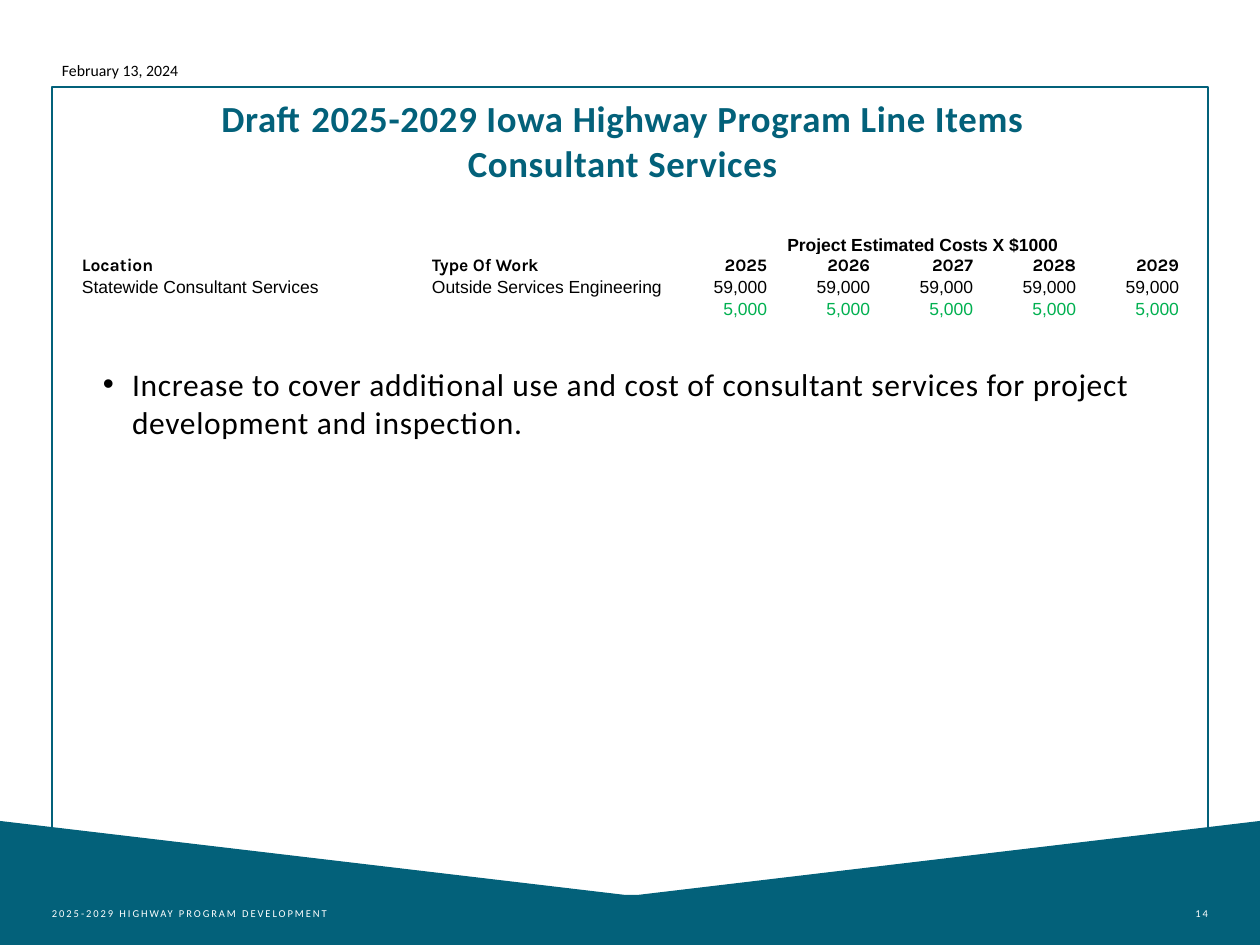
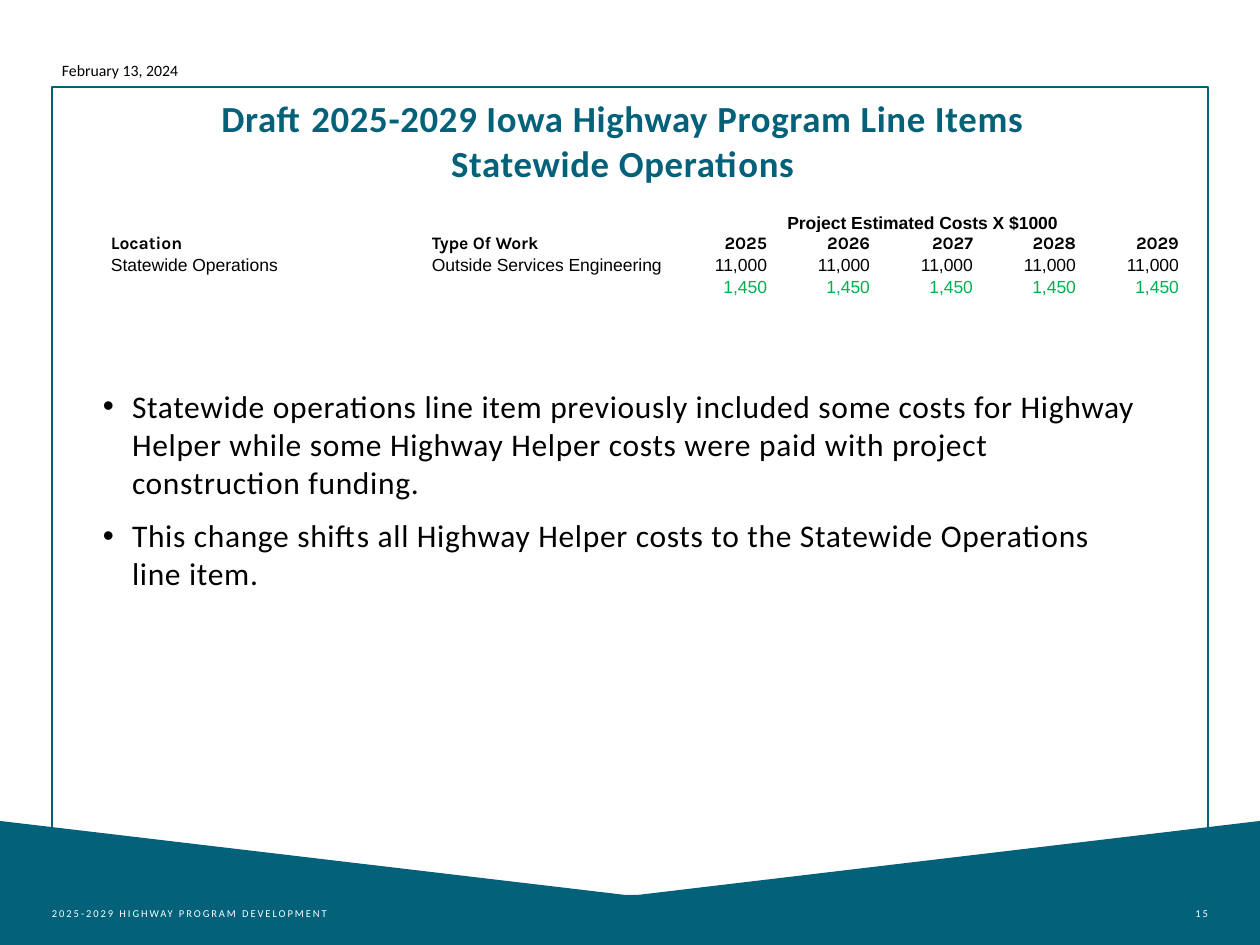
from dataclasses import dataclass

from lxml import etree
from pptx import Presentation
from pptx import util as u
from pptx.dml.color import RGBColor
from pptx.enum import shapes, text
from pptx.oxml.ns import qn

LEFT, CENTER, RIGHT = text.PP_ALIGN.LEFT, text.PP_ALIGN.CENTER, text.PP_ALIGN.RIGHT


@dataclass(frozen=True)
class Theme:
    teal: str = "03617A"
    white: str = "FFFFFF"
    black: str = "000000"
    green: str = "00B050"
    main_font: str = "Calibri"
    table_font: str = "Arial"
    heading_font: str = "Karla"
    footer_size: int = 6
    date_size: int = 9
    table_size: int = 10
    body_size: int = 18
    title_size: int = 21


theme = Theme()


def px(n):
    """Convert pixels, 126 to the inch, to EMU."""
    return u.Emu(round(n * 914400 / 126))


def write(frame, lines, size, color, font=theme.main_font, align=LEFT,
          bold=False, tracking=0, bulleted=False):
    """Fill a text frame; tracking is in hundredths of a point."""
    frame.text = "\n".join(lines)
    for index, paragraph in enumerate(frame.paragraphs):
        paragraph.alignment = align
        if bulleted:
            properties = paragraph._p.get_or_add_pPr()
            properties.set("marL", str(px(29)))
            properties.set("indent", str(-px(29)))
            etree.SubElement(properties, qn("a:buFont")).set("typeface", "Arial")
            etree.SubElement(properties, qn("a:buChar")).set("char", "•")
            if index:
                paragraph.space_before = u.Pt(9)
        for run in paragraph.runs:
            run.font.size = u.Pt(size)
            run.font.name = font
            run.font.bold = bold
            run.font.color.rgb = RGBColor.from_string(color)
            if tracking:
                run._r.get_or_add_rPr().set("spc", str(tracking))
        if not paragraph.runs:
            # An empty line needs its own size, or it would stretch its row
            end = etree.SubElement(paragraph._p, qn("a:endParaRPr"))
            end.set("sz", str(size * 100))


years = ["2025", "2026", "2027", "2028", "2029"]
program_items = [
    dict(number="14", title="Consultant Services", location="Statewide Consultant Services",
         cost="59,000", increase="5,000", table_left=81, table_top=232, notes_top=359,
         notes=["Increase to cover additional use and cost of consultant services "
                "for project development and inspection."]),
    dict(number="15", title="Statewide Operations", location="Statewide Operations",
         cost="11,000", increase="1,450", table_left=110, table_top=210, notes_top=381,
         notes=["Statewide operations line item previously included some costs for Highway "
                "Helper while some Highway Helper costs were paid with project "
                "construction funding.",
                "This change shifts all Highway Helper costs to the Statewide Operations "
                "line item."]),
]
work_left, work_width, year_width = 431, 234, 103
band_outline = [(1260, 945), (0, 945), (0, 821), (625, 895), (638, 895)]

prs = Presentation()
prs.slide_width, prs.slide_height = px(1260), px(945)

for item in program_items:
    slide = prs.slides.add_slide(prs.slide_layouts[6])
    slide.background.fill.solid()
    slide.background.fill.fore_color.rgb = RGBColor.from_string(theme.white)

    # Footer band and frame
    outline = slide.shapes.build_freeform(px(1260), px(821))
    outline.add_line_segments([(px(x), px(y)) for x, y in band_outline])
    band = outline.convert_to_shape()
    band.shadow.inherit = False
    band.fill.solid()
    band.fill.fore_color.rgb = RGBColor.from_string(theme.teal)
    band.line.fill.background()

    frame = slide.shapes.add_shape(shapes.MSO_SHAPE.RECTANGLE,
                                   px(52), px(87), px(1156), px(839))
    frame.shadow.inherit = False
    frame.fill.background()
    frame.line.color.rgb = RGBColor.from_string(theme.teal)
    frame.line.width = u.Pt(1)

    # Footer texts
    for label, left, width, align in [
            ("2025-2029 HIGHWAY PROGRAM DEVELOPMENT", 52, 336, LEFT),
            (item["number"], 1086, 122, RIGHT)]:
        footer = slide.shapes.add_textbox(px(left), px(876), px(width), px(50)).text_frame
        footer.word_wrap = True
        footer.vertical_anchor = text.MSO_ANCHOR.BOTTOM
        footer.margin_left = footer.margin_right = 0
        write(footer, [label], theme.footer_size, theme.white, align=align, tracking=110)

    # Date, title and notes
    date = slide.shapes.add_textbox(px(40), px(55), px(160), px(32)).text_frame
    date.word_wrap = False
    write(date, ["February 13, 2024"], theme.date_size, theme.black, align=CENTER)

    title = slide.shapes.add_textbox(px(103), px(90), px(1052), px(105)).text_frame
    notes = slide.shapes.add_textbox(px(103), px(item["notes_top"]),
                                     px(1052), px(388)).text_frame
    for box in (title, notes):
        box.word_wrap = True
        box.margin_left = 0
    write(title, ["Draft 2025-2029 Iowa Highway Program Line Items", item["title"]],
          theme.title_size, theme.teal, align=CENTER, bold=True, tracking=40)
    write(notes, item["notes"], theme.body_size, theme.black, tracking=40, bulleted=True)

    # Cost table
    rows = [
        ["", "", "Project Estimated Costs X $1000", "", "", "", ""],
        ["Location", "Type Of Work", *years],
        [item["location"], "Outside Services Engineering", *[item["cost"]] * len(years)],
        ["", "", *[item["increase"]] * len(years)],
    ]
    widths = [work_left - item["table_left"], work_width] + [year_width] * len(years)
    heights = [23, 22, 22, 22]
    costs = slide.shapes.add_table(len(rows), len(widths), px(item["table_left"]),
                                   px(item["table_top"]), px(sum(widths)),
                                   px(sum(heights))).table
    costs.first_row = costs.horz_banding = False
    for column, width in zip(costs.columns, widths):
        column.width = px(width)
    for row, height in zip(costs.rows, heights):
        row.height = px(height)
    costs.cell(0, 2).merge(costs.cell(0, 6))
    for r, row in enumerate(rows):
        for c, value in enumerate(row):
            cell = costs.cell(r, c)
            cell.margin_left = cell.margin_right = cell.margin_top = px(1)
            cell.margin_bottom = 0
            if r == 1:
                cell.fill.solid()
                cell.fill.fore_color.rgb = RGBColor.from_string(theme.white)
            else:
                cell.fill.background()
            if r == 0:
                cell.vertical_anchor = text.MSO_ANCHOR.BOTTOM
            write(cell.text_frame, [value], theme.table_size,
                  theme.green if r == 3 else theme.black,
                  font=theme.heading_font if r == 1 else theme.table_font,
                  align=LEFT if c < 2 else CENTER if r == 0 else RIGHT,
                  bold=r < 2)

prs.save("out.pptx")
